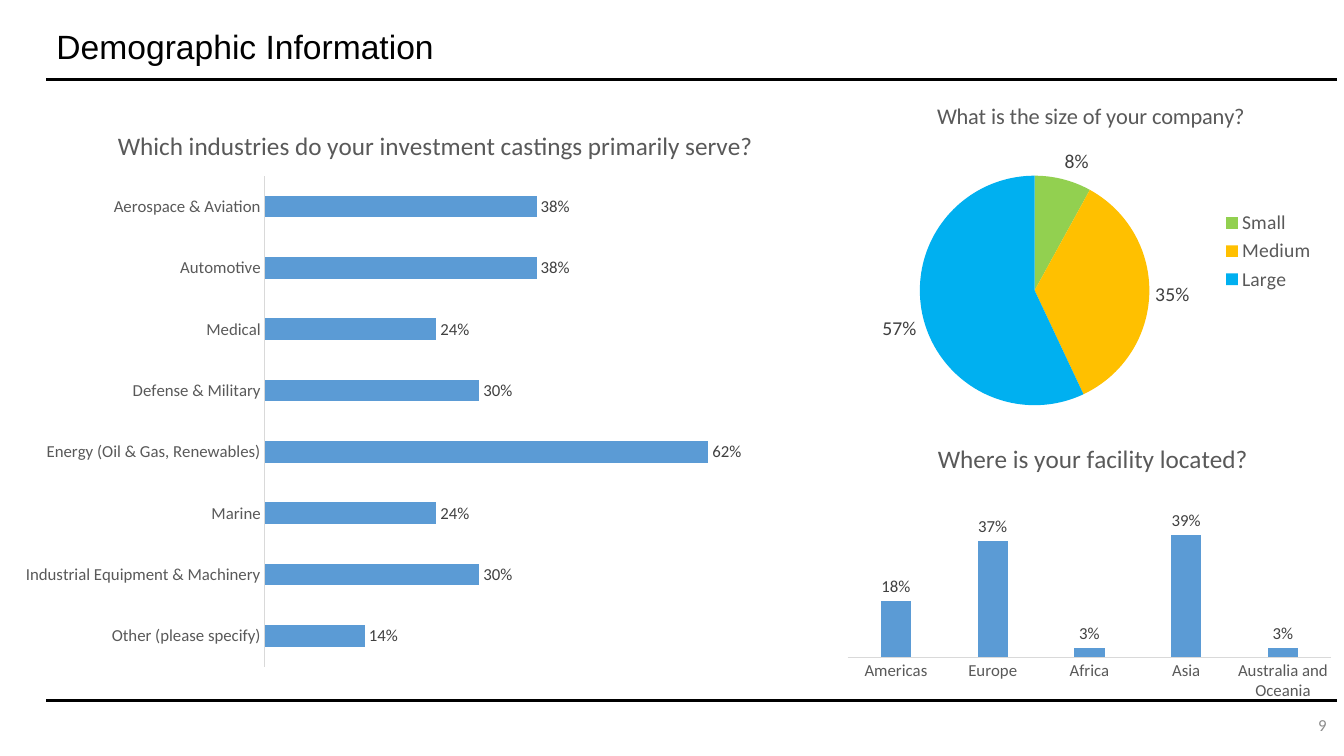
"""Build the demographic information slide with its three survey charts."""
import pptx
import pptx.chart.data
import pptx.dml.color
import pptx.enum.chart
import pptx.enum.shapes
import pptx.enum.text
import pptx.oxml
import pptx.oxml.ns
import pptx.util

Pt = pptx.util.Pt
RGBColor = pptx.dml.color.RGBColor
qn = pptx.oxml.ns.qn
Kind = pptx.enum.chart.XL_CHART_TYPE
Align = pptx.enum.text.PP_ALIGN

BLACK = RGBColor(0x00, 0x00, 0x00)
PAGE_GRAY = RGBColor(0x8C, 0x8C, 0x8C)
TEXT_GRAY = RGBColor(0x59, 0x59, 0x59)
LABEL_GRAY = RGBColor(0x40, 0x40, 0x40)
AXIS_GRAY = RGBColor(0xD9, 0xD9, 0xD9)
BAR_BLUE = RGBColor(0x5B, 0x9B, 0xD5)
SIZE_COLORS = [RGBColor(0x92, 0xD0, 0x50), RGBColor(0xFF, 0xC0, 0x00), RGBColor(0x00, 0xB0, 0xF0)]


def add_text(box, text, size, font_name, color, align):
    frame = slide.shapes.add_textbox(*map(Pt, box)).text_frame
    frame.word_wrap = True
    frame.vertical_anchor = pptx.enum.text.MSO_ANCHOR.MIDDLE
    paragraph = frame.paragraphs[0]
    paragraph.alignment = align
    run = paragraph.add_run()
    run.text = text
    run.font.size = Pt(size)
    run.font.name = font_name
    run.font.color.rgb = color


def set_layout(parent, index, **fractions):
    for old in parent.findall(qn("c:layout")):
        parent.remove(old)
    target = '<c:layoutTarget val="inner"/>' if "w" in fractions else ""
    modes = "".join(f'<c:{key}Mode val="edge"/>' for key in fractions if key in "xy")
    values = "".join(f'<c:{key} val="{value}"/>' for key, value in fractions.items())
    parent.insert(index, pptx.oxml.parse_xml(
        f'<c:layout {pptx.oxml.ns.nsdecls("c")}><c:manualLayout>'
        f'{target}{modes}{values}</c:manualLayout></c:layout>'))


deck = pptx.Presentation()
deck.slide_width, deck.slide_height = Pt(960), Pt(540)
slide = deck.slides.add_slide(deck.slide_layouts[6])

for rule_y in (57, 500.4):
    rule = slide.shapes.add_connector(
        pptx.enum.shapes.MSO_CONNECTOR.STRAIGHT, Pt(33), Pt(rule_y), Pt(954.75), Pt(rule_y))
    rule.line.color.rgb = BLACK
    rule.line.width = Pt(0)
    rule._element.spPr.append(pptx.oxml.parse_xml(f'<a:effectLst {pptx.oxml.ns.nsdecls("a")}/>'))

add_text((678.25, 505.5, 276.5, 24), "9", 12, "Calibri", PAGE_GRAY, Align.RIGHT)
add_text((33.25, 13.5, 722, 39), "Demographic Information", 24, "Arial", BLACK, Align.LEFT)

facilities = {"Americas": 0.18, "Europe": 0.37, "Africa": 0.03, "Asia": 0.39,
              "Australia and Oceania": 0.03}
industries = {"Other (please specify)": 0.14, "Industrial Equipment & Machinery": 0.3,
              "Marine": 0.24, "Energy (Oil & Gas, Renewables)": 0.62,
              "Defense & Military": 0.3, "Medical": 0.24, "Automotive": 0.38,
              "Aerospace & Aviation": 0.38}
company_sizes = {"Small": 0.08, "Medium": 0.35, "Large": 0.57}

surveys = [
    (Kind.COLUMN_CLUSTERED, (598.25, 290.25, 360, 216), "Where is your facility located?", 18,
     (0.19, 0.1), (0.02, 0.31, 0.96, 0.52), facilities, 12),
    (Kind.BAR_CLUSTERED, (8.75, 72, 601.25, 412.5),
     "Which industries do your investment castings primarily serve?", 18,
     (0.12, 0.04), (0.3, 0.13, 0.68, 0.85), industries, 12),
    (Kind.PIE, (609, 57, 337.75, 244.75), "What is the size of your company?", 16,
     (0.17, 0.05), (0.14, 0.28, 0.49, 0.67), company_sizes, 14),
]

for kind, box, question, question_size, question_at, plot_at, answers, label_size in surveys:
    answer_data = pptx.chart.data.CategoryChartData(number_format="0%")
    answer_data.categories = list(answers)
    answer_data.add_series("Series 1", list(answers.values()))
    chart = slide.shapes.add_chart(kind, *map(Pt, box), answer_data).chart
    chart.font.size = Pt(12)
    chart.font.name = "Calibri"
    chart.font.color.rgb = BLACK

    chart.has_title = True
    question_run = chart.chart_title.text_frame.paragraphs[0].add_run()
    question_run.text = question
    question_run.font.size = Pt(question_size)
    question_run.font.bold = False
    question_run.font.name = "Calibri"
    question_run.font.color.rgb = TEXT_GRAY
    set_layout(chart.chart_title._element, 1, **dict(zip("xy", question_at)))
    set_layout(chart._chartSpace.chart.plotArea, 0, **dict(zip("xywh", plot_at)))

    plot = chart.plots[0]
    plot.has_data_labels = True
    labels = plot.data_labels
    labels.show_value = True
    labels.show_percentage = False
    labels.number_format = "0%"
    labels.number_format_is_linked = False
    labels.position = pptx.enum.chart.XL_LABEL_POSITION.OUTSIDE_END
    labels.font.size = Pt(label_size)
    labels.font.name = "Calibri"
    labels.font.color.rgb = LABEL_GRAY
    series = plot.series[0]

    chart.has_legend = kind == Kind.PIE
    if kind == Kind.PIE:
        chart.legend.position = pptx.enum.chart.XL_LEGEND_POSITION.RIGHT
        chart.legend.include_in_layout = False
        chart.legend.font.size = Pt(14)
        chart.legend.font.name = "Calibri"
        chart.legend.font.color.rgb = TEXT_GRAY
        for index, color in enumerate(SIZE_COLORS):
            slice_fill = series.points[index].format.fill
            slice_fill.solid()
            slice_fill.fore_color.rgb = color
        continue

    plot.vary_by_categories = False
    plot.gap_width = 219 if kind == Kind.COLUMN_CLUSTERED else 182
    plot.overlap = -27 if kind == Kind.COLUMN_CLUSTERED else 0
    series.format.fill.solid()
    series.format.fill.fore_color.rgb = BAR_BLUE

    category_axis = chart.category_axis
    category_axis.major_tick_mark = pptx.enum.chart.XL_TICK_MARK.NONE
    category_axis.format.line.color.rgb = AXIS_GRAY
    category_axis.format.line.width = Pt(0.75)
    category_axis.tick_labels.font.size = Pt(12)
    category_axis.tick_labels.font.name = "Calibri"
    category_axis.tick_labels.font.color.rgb = TEXT_GRAY

    value_axis = chart.value_axis
    value_axis.visible = False
    value_axis.has_major_gridlines = False
    value_axis.minimum_scale = 0
    value_axis.maximum_scale = 0.5 if kind == Kind.COLUMN_CLUSTERED else 0.8
    value_axis.major_unit = 0.2

deck.save("out.pptx")
